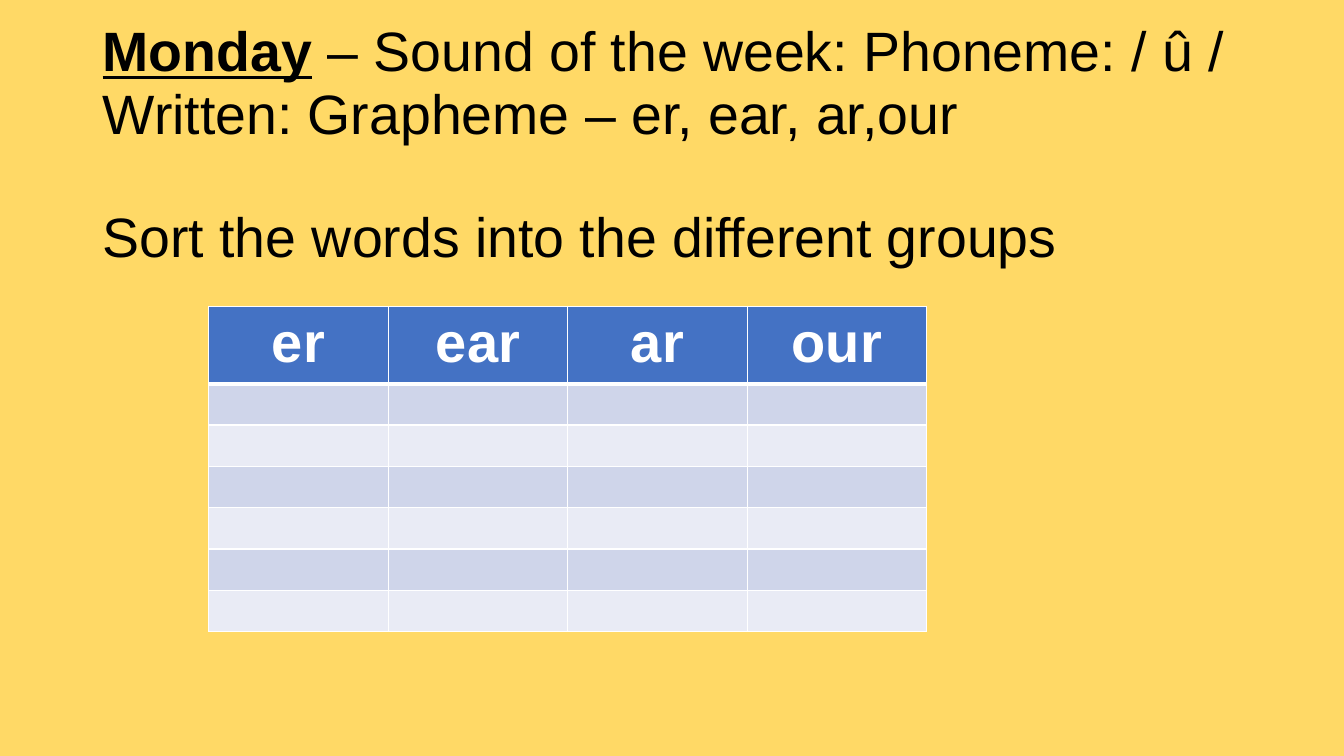
from pptx import Presentation
from pptx.dml.color import RGBColor
from pptx.enum.text import MSO_ANCHOR as Anchor, PP_ALIGN as Align
from pptx.oxml import parse_xml
from pptx.oxml.ns import nsdecls
from pptx.util import Inches, Pt

WIDE, HIGH = 13.33, 7.5
FONT = "Arial"
HEADS = ["er", "ear", "ar", "our"]
BANDS = ["E9EBF5", "CFD5EA"]
ROWS, COL, HEAD, ROW = 6, 1.78, 0.71, 0.41


def color(code):
    return RGBColor.from_string(code)


def write(para, text, size=40, ink="000000", bold=False, line=False, align=Align.LEFT):
    para.alignment = align
    run = para.add_run()
    run.text = text
    font = run.font
    font.name, font.size = FONT, Pt(size)
    font.bold, font.underline = bold, line
    font.color.rgb = color(ink)


def title(slide):
    box = slide.shapes.add_textbox(Inches(0.92), Inches(0.72), Inches(11.5), Inches(1.45))
    frame = box.text_frame
    frame.word_wrap = True
    frame.vertical_anchor = Anchor.MIDDLE
    lines = [
        [("Monday", True), (" – Sound of the week: Phoneme: / û /", False)],
        [("Written: Grapheme – er, ear, ar,our", False)],
        [("Sort the words into the different groups", False)],
    ]
    for i, parts in enumerate(lines):
        para = frame.add_paragraph() if i else frame.paragraphs[0]
        para.line_spacing = 0.94
        for text, strong in parts:
            write(para, text, size=39.6, bold=strong, line=strong)
    # One empty line's height above the task
    para.space_before = Pt(43)


def edge(cell, side, width):
    cell._tc.get_or_add_tcPr().append(parse_xml(
        f'<a:ln{side} {nsdecls("a")} w="{Pt(width)}"><a:solidFill>'
        f'<a:srgbClr val="FFFFFF"/></a:solidFill></a:ln{side}>'))


def paint(cell, fill, top=1, base=1):
    # Borders come before the fill in the cell's XML
    for side, width in zip("LRTB", (1, 1, top, base)):
        edge(cell, side, width)
    cell.fill.solid()
    cell.fill.fore_color.rgb = color(fill)


def chart(slide):
    count = len(HEADS)
    grid = slide.shapes.add_table(
        ROWS + 1, count, Inches(2.07), Inches(3.04),
        Inches(count * COL), Inches(HEAD + ROWS * ROW)).table
    for col in grid.columns:
        col.width = Inches(COL)
    for r, row in enumerate(grid.rows):
        row.height = Inches(ROW if r else HEAD)
        for c, cell in enumerate(row.cells):
            if r:
                paint(cell, BANDS[r % 2], top=3 if r == 1 else 1)
            else:
                paint(cell, "4472C4", base=3)
                write(cell.text_frame.paragraphs[0], HEADS[c],
                      ink="FFFFFF", bold=True, align=Align.CENTER)


def main():
    deck = Presentation()
    deck.slide_width, deck.slide_height = Inches(WIDE), Inches(HIGH)
    slide = deck.slides.add_slide(deck.slide_layouts[6])
    back = slide.background.fill
    back.solid()
    back.fore_color.rgb = color("FFD966")
    title(slide)
    chart(slide)
    deck.save("out.pptx")


if __name__ == "__main__":
    main()
